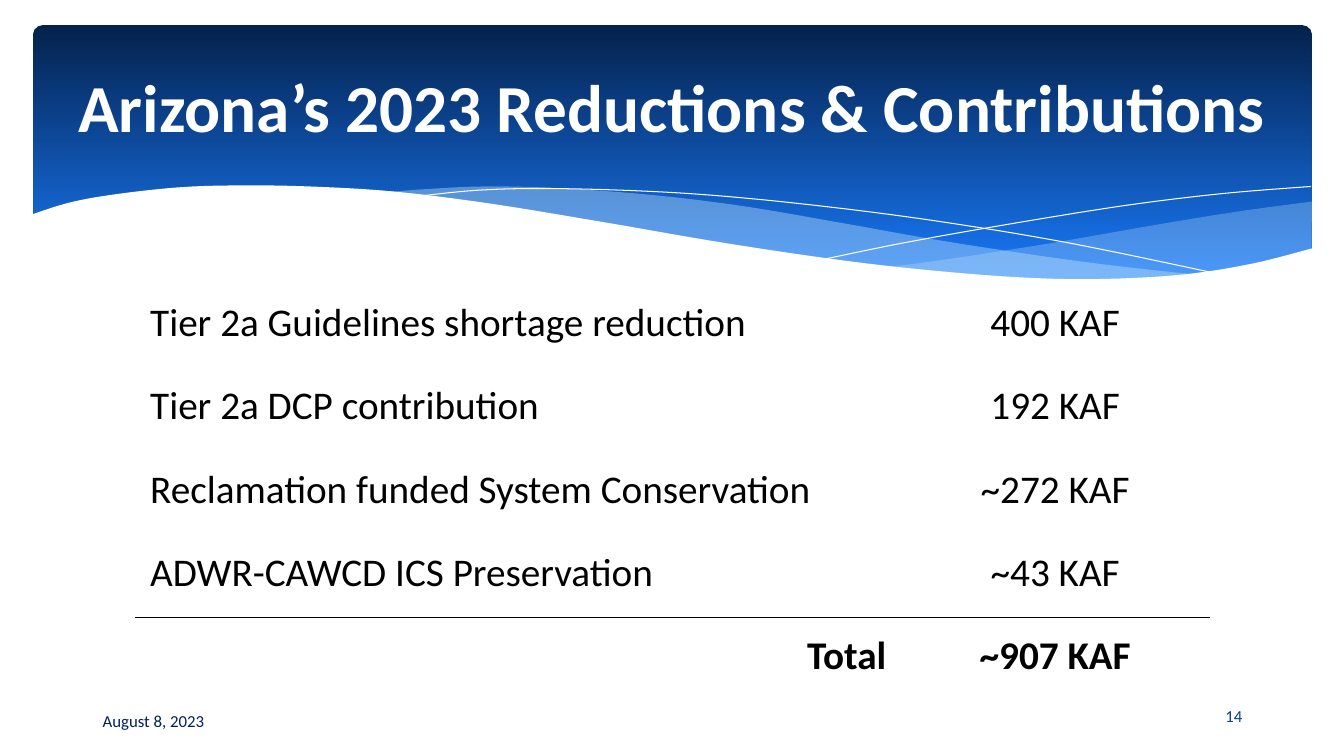
from dataclasses import dataclass

import lxml.etree
import pptx
import pptx.dml.color
import pptx.enum.shapes
import pptx.enum.text
import pptx.oxml
import pptx.oxml.ns
import pptx.util

Inches, Pt = pptx.util.Inches, pptx.util.Pt
RGB = pptx.dml.color.RGBColor.from_string
ALIGN, ANCHOR = pptx.enum.text.PP_ALIGN, pptx.enum.text.MSO_ANCHOR
qn = pptx.oxml.ns.qn


@dataclass(frozen=True)
class Theme:
    font: str = "Calibri"
    white: str = "FFFFFF"
    black: str = "000000"
    banner_top: str = "04224C"
    banner_bottom: str = "1876F4"
    wave: str = "C6E7FC"
    date: str = "002060"
    number: str = "073E87"
    title_size: int = 48
    table_size: int = 28
    footer_size: int = 12


THEME = Theme()

ROWS = [
    ("Tier 2a Guidelines shortage reduction", "400 KAF"),
    ("Tier 2a DCP contribution", "192 KAF"),
    ("Reclamation funded System Conservation", "~272 KAF"),
    ("ADWR-CAWCD ICS Preservation", "~43 KAF"),
    ("Total", "~907 KAF"),
]

# Wave edges in inches; each edge is smoothed through its points
RIGHT_TOP = [(13.01, 2), (12.27, 2.1), (11.47, 2.23), (10.38, 2.42), (9.41, 2.57), (8.82, 2.65)]
RIGHT_BOTTOM = [(8.82, 2.65), (9.58, 2.72), (10.25, 2.77), (10.85, 2.78), (11.51, 2.75),
                (12.07, 2.69), (12.57, 2.59), (13.01, 2.47)]
LEFT_TOP = [(11.9, 2.73), (10.76, 2.6), (9.41, 2.4), (8.39, 2.22), (7.4, 2.05), (6.52, 1.94),
            (5.6, 1.87), (4.82, 1.85), (4.18, 1.88), (3.82, 1.91)]
LEFT_BOTTOM = [(3.82, 1.91), (4.83, 2.03), (5.99, 2.22), (7.06, 2.4), (8.02, 2.55), (9.07, 2.68),
               (9.98, 2.76), (10.76, 2.78), (11.43, 2.77), (11.9, 2.73)]
LONG_LINE = [(4.12, 1.95), (4.7, 1.89), (5.35, 1.87), (6.25, 1.89), (7.1, 1.94), (8.11, 2.04),
             (9.27, 2.19), (10.6, 2.41), (12.1, 2.72)]
SHORT_LINE = [(8.18, 2.57), (8.96, 2.41), (9.97, 2.23), (11.15, 2.04), (12.13, 1.92), (13, 1.85)]
WHITE_EDGE = [(13.03, 2.46), (12.4, 2.62), (11.67, 2.73), (10.78, 2.77), (9.92, 2.74), (8.91, 2.65),
              (8.04, 2.54), (7.06, 2.39), (5.96, 2.2), (4.86, 2.02), (3.9, 1.9), (3.06, 1.85),
              (2.35, 1.84), (1.76, 1.86), (1.13, 1.93), (0.69, 2.01), (0.31, 2.13)]


def smooth(points, steps=8):
    """Return a Catmull-Rom curve through the points."""
    ends = [points[0], *points, points[-1]]
    curve = [points[0]]
    for a, b, c, d in zip(ends, ends[1:], ends[2:], ends[3:]):
        for i in range(1, steps + 1):
            t = i / steps
            curve.append(tuple(
                (2 * q + (r - p) * t + (2 * p - 5 * q + 4 * r - s) * t ** 2
                 + (3 * q - p - 3 * r + s) * t ** 3) / 2
                for p, q, r, s in zip(a, b, c, d)))
    return curve


def add_outline(slide, points, fill=None, alpha=None, line=None):
    pts = [(Inches(x), Inches(y)) for x, y in points]
    builder = slide.shapes.build_freeform(*pts[0], scale=1.0)
    builder.add_line_segments(pts[1:], close=fill is not None)
    sp = builder.convert_to_shape()
    sp.shadow.inherit = False
    if fill:
        sp.fill.solid()
        sp.fill.fore_color.rgb = RGB(fill)
    else:
        sp.fill.background()
    if alpha:
        color = sp._element.spPr.find(qn("a:solidFill"))[0]
        lxml.etree.SubElement(color, qn("a:alpha"), val=str(alpha * 1000))
    if line:
        sp.line.color.rgb = RGB(line)
        sp.line.width = Pt(0)
    else:
        sp.line.fill.background()


def add_banner(slide):
    sp = slide.shapes.add_shape(pptx.enum.shapes.MSO_SHAPE.ROUNDED_RECTANGLE,
                                Inches(0.33), Inches(0.25), Inches(12.68), Inches(2.7))
    sp.adjustments[0] = 0.034
    sp.shadow.inherit = False
    sp.line.fill.background()
    sp.fill.gradient()
    sp.fill.gradient_angle = 270
    stops = [(0, THEME.banner_top), (0.9, THEME.banner_bottom)]
    for stop, (position, color) in zip(sp.fill.gradient_stops, stops):
        stop.position = position
        stop.color.rgb = RGB(color)


def write(tf, text, size, color, align=ALIGN.LEFT, bold=False):
    p = tf.paragraphs[0]
    p.alignment = align
    r = p.add_run()
    r.text = text
    r.font.color.rgb = RGB(color)
    for name, value in {"name": THEME.font, "size": Pt(size), "bold": bold}.items():
        setattr(r.font, name, value)


def add_title(slide, text):
    sp = slide.shapes.title
    box = {"left": 0, "top": 0.36, "width": 13.33, "height": 1.37}
    for name, value in box.items():
        setattr(sp, name, Inches(value))
    tf = sp.text_frame
    frame = {"word_wrap": True, "vertical_anchor": ANCHOR.MIDDLE,
             "auto_size": pptx.enum.text.MSO_AUTO_SIZE.NONE}
    for name, value in frame.items():
        setattr(tf, name, value)
    write(tf, text, THEME.title_size, THEME.white, ALIGN.CENTER, True)
    # Bring the title in front of the banner
    slide.shapes._spTree.append(sp._element)


def add_footer(slide, left, text, color, align, anchor):
    sp = slide.shapes.add_textbox(Inches(left), Inches(6.95), Inches(3), Inches(0.4))
    tf = sp.text_frame
    tf.word_wrap = True
    tf.vertical_anchor = anchor
    write(tf, text, THEME.footer_size, color, align)


def add_border(cell, tag):
    ln = pptx.oxml.parse_xml(
        f'<a:{tag} {pptx.oxml.ns.nsdecls("a")} w="12700"><a:solidFill>'
        f'<a:srgbClr val="{THEME.black}"/></a:solidFill></a:{tag}>')
    cell._tc.get_or_add_tcPr().insert(0, ln)


def add_amounts(slide, rows):
    frame = slide.shapes.add_table(len(rows), 2, Inches(1.34), Inches(2.82),
                                   Inches(10.65), Inches(4.13))
    table = frame.table
    table.first_row = table.horz_banding = False
    for column, width in zip(table.columns, (7.6, 3.05)):
        column.width = Inches(width)
    total = len(rows) - 1
    for i, row in enumerate(rows):
        label_align = ALIGN.RIGHT if i == total else ALIGN.LEFT
        for j, (text, align) in enumerate(zip(row, (label_align, ALIGN.CENTER))):
            cell = table.cell(i, j)
            cell.fill.background()
            for side in ("left", "right", "top", "bottom"):
                setattr(cell, f"margin_{side}", Inches(0.15))
            write(cell.text_frame, text, THEME.table_size, THEME.black, align, i == total)
            # Rule between the items and the total
            if i >= total - 1:
                add_border(cell, "lnT" if i == total else "lnB")


def main():
    prs = pptx.Presentation()
    prs.slide_width, prs.slide_height = Inches(13.33), Inches(7.5)
    slide = prs.slides.add_slide(prs.slide_layouts[5])

    # Banner with waves
    add_banner(slide)
    add_outline(slide, smooth(RIGHT_TOP) + smooth(RIGHT_BOTTOM), THEME.wave, 29)
    add_outline(slide, smooth(LEFT_TOP) + smooth(LEFT_BOTTOM), THEME.wave, 40)
    for points in (LONG_LINE, SHORT_LINE):
        add_outline(slide, smooth(points), line=THEME.white)
    add_outline(slide, smooth(WHITE_EDGE) + [(0.31, 3.29), (13.03, 3.29)], THEME.white)

    # Title, amounts and footer
    add_title(slide, "Arizona’s 2023 Reductions & Contributions")
    add_footer(slide, 9.42, "14", THEME.number, ALIGN.RIGHT, ANCHOR.TOP)
    add_amounts(slide, ROWS)
    add_footer(slide, 0.92, "August 8, 2023", THEME.date, ALIGN.LEFT, ANCHOR.MIDDLE)

    prs.save("out.pptx")


if __name__ == "__main__":
    main()
